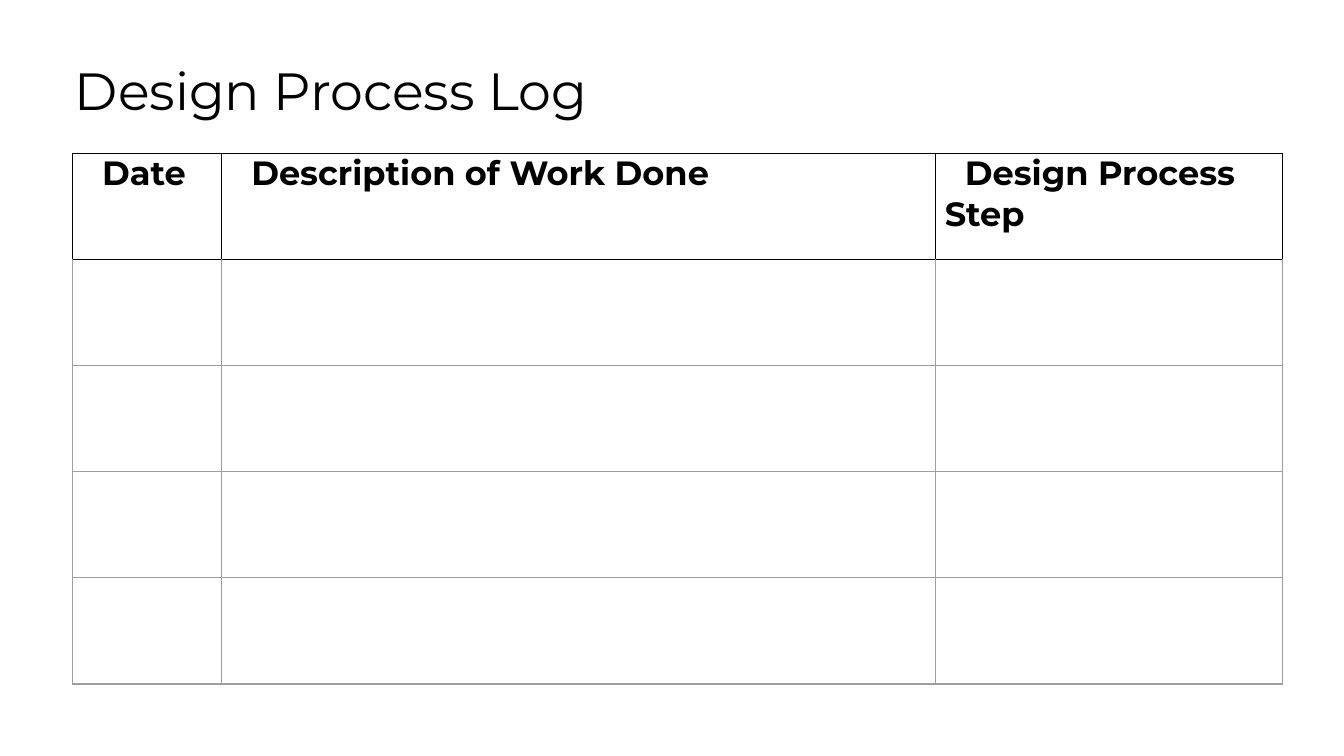
"""Build the Design Process Log slide: a title above an empty log table."""
from dataclasses import dataclass

from lxml.etree import SubElement
from pptx import Presentation
from pptx.dml.color import RGBColor
from pptx.enum.text import MSO_ANCHOR
from pptx.oxml.ns import qn
from pptx.util import Inches, Pt


@dataclass(frozen=True)
class Theme:
    font: str = "Montserrat"
    ink: str = "000000"
    grid: str = "9E9E9E"
    title_size: int = 28
    header_size: int = 18
    header_line: float = 0.5
    grid_line: float = 0.75


theme = Theme()


def add_run(paragraph, text, size, bold=False):
    run = paragraph.add_run()
    run.text = text
    run.font.name = theme.font
    run.font.size = Pt(size)
    run.font.bold = bold
    run.font.color.rgb = RGBColor.from_string(theme.ink)


def add_border(cell, side, color, width):
    properties = cell._tc.get_or_add_tcPr()
    line = SubElement(properties, qn(f"a:ln{side}"), w=str(Pt(width)))
    fill = SubElement(line, qn("a:solidFill"))
    SubElement(fill, qn("a:srgbClr"), val=color)
    SubElement(line, qn("a:prstDash"), val="solid")


presentation = Presentation()
presentation.slide_width = Inches(10)
presentation.slide_height = Inches(10 * 9 / 16)
slide = presentation.slides.add_slide(presentation.slide_layouts[6])

title = slide.shapes.add_textbox(Inches(0.46), Inches(0.33), Inches(9), Inches(0.81))
title_frame = title.text_frame
title_frame.word_wrap = True
title_frame.vertical_anchor = MSO_ANCHOR.TOP
title_frame.margin_left = title_frame.margin_right = Inches(0.1)
title_frame.margin_top = title_frame.margin_bottom = Inches(0.1)
add_run(title_frame.paragraphs[0], "Design Process Log", theme.title_size)

headers = ["Date", "Description of Work Done", "Design Process Step"]
column_widths = [1.11, 5.31, 2.58]
row_count = 5
row_height = 0.79

log_frame = slide.shapes.add_table(
    row_count, len(headers), Inches(0.54), Inches(1.14),
    Inches(sum(column_widths)), Inches(row_count * row_height),
)
log = log_frame.table
log.first_row = False
log.horz_banding = False

for column, width in zip(log.columns, column_widths):
    column.width = Inches(width)

for row_index, row in enumerate(log.rows):
    row.height = Inches(row_height)
    for cell in row.cells:
        for side in "LRTB":
            if row_index == 0 or (row_index == 1 and side == "T"):
                add_border(cell, side, theme.ink, theme.header_line)
            else:
                add_border(cell, side, theme.grid, theme.grid_line)
        cell.fill.background()

for cell, header in zip(log.rows[0].cells, headers):
    cell.margin_left = cell.margin_right = Inches(0.07)
    cell.margin_top = cell.margin_bottom = Inches(0)
    paragraph = cell.text_frame.paragraphs[0]
    paragraph.space_before = Pt(6)
    paragraph._p.get_or_add_pPr().set("indent", str(Inches(0.15)))
    add_run(paragraph, header, theme.header_size, bold=True)

presentation.save("out.pptx")
